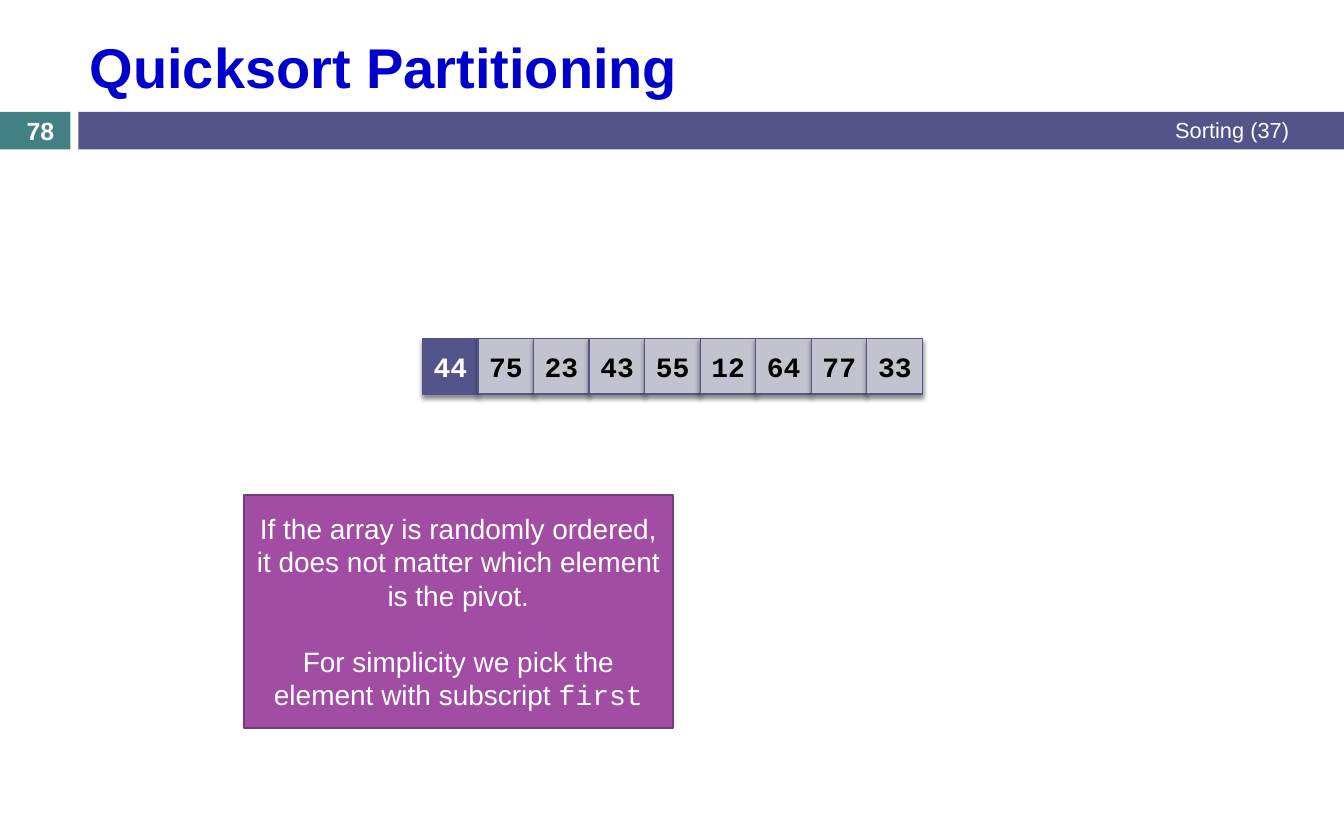
from lxml import etree
from pptx import Presentation
from pptx.dml.color import RGBColor
from pptx.enum.shapes import MSO_SHAPE as Shape
from pptx.enum.text import MSO_ANCHOR as Anchor, PP_ALIGN as Align
from pptx.oxml import parse_xml
from pptx.oxml.ns import nsdecls
from pptx.util import Cm, Pt

INDIGO, TEAL, PURPLE, WHITE = "53548A", "438086", "A04DA3", "FFFFFF"
SHADOW = (
    f'<a:effectLst {nsdecls("a")}>'
    '<a:outerShdw blurRad="38100" dist="30480" dir="5400000" rotWithShape="0">'
    '<a:srgbClr val="000000"><a:alpha val="45000"/></a:srgbClr>'
    '</a:outerShdw></a:effectLst>'
)


def add_box(shapes, left, top, width, height, fill, outline=None, weight=0.75):
    box = shapes.add_shape(Shape.RECTANGLE, Cm(left), Cm(top), Cm(width), Cm(height))
    box.shadow.inherit = False
    box.fill.solid()
    box.fill.fore_color.rgb = RGBColor.from_string(fill)
    if outline:
        box.line.color.rgb = RGBColor.from_string(outline)
        box.line.width = Pt(weight)
    else:
        box.line.fill.background()
    return box


def format_text(holder, size, color, align, bold=False, font="Arial"):
    frame = holder.text_frame
    frame.word_wrap = True
    frame.vertical_anchor = Anchor.MIDDLE
    for paragraph in frame.paragraphs:
        paragraph.alignment = align
        for run in paragraph.runs:
            run.font.name = font
            run.font.size = Pt(size)
            run.font.bold = bold
            run.font.color.rgb = RGBColor.from_string(color)


prs = Presentation()
prs.slide_width, prs.slide_height = Cm(30.48), Cm(19.05)
slide = prs.slides.add_slide(prs.slide_layouts[5])

title = slide.shapes.title
title.left, title.top, title.width, title.height = Cm(1.78), Cm(0.48), Cm(27.71), Cm(2.03)
title.text_frame.text = "Quicksort Partitioning"
format_text(title, 36, "0000CC", Align.LEFT, bold=True)

add_box(slide.shapes, 0, 2.54, 1.6, 0.85, TEAL)
add_box(slide.shapes, 1.78, 2.54, 28.7, 0.85, INDIGO)

array = slide.shapes.add_group_shape()
for index, value in enumerate([44, 75, 23, 43, 55, 12, 64, 77, 33]):
    is_pivot = index == 0
    cell = add_box(array.shapes, 9.58 + index * 1.26, 7.67, 1.27, 1.27,
                   INDIGO if is_pivot else "C3C3CF", INDIGO, 0.79)
    properties = cell.fill._xPr
    properties.replace(properties.find("{*}effectLst"), parse_xml(SHADOW))
    cell.text_frame.margin_left = cell.text_frame.margin_right = 0
    cell.text_frame.text = str(value)
    format_text(cell, 18, WHITE if is_pivot else "000000", Align.CENTER,
                bold=True, font="Courier New")

pivot_note = add_box(slide.shapes, 5.53, 11.22, 9.73, 5.29, PURPLE, "763979", 1.5)
pivot_note.text_frame.text = (
    "If the array is randomly ordered, it does not matter which element is the pivot."
)
choice = pivot_note.text_frame.add_paragraph()
choice.text = "For simplicity we pick the element with subscript "
choice.space_before = Pt(20.7)
subscript = choice.add_run()
subscript.text = "first"
format_text(pivot_note, 18, WHITE, Align.CENTER)
subscript.font.name = "Courier New"

for left, top, width, height, label, size, align, bold in [
    (11.43, 2.51, 18.06, 0.89, "Sorting (37)", 14, Align.RIGHT, False),
    (0, 2.57, 1.83, 0.76, "78", 16, Align.CENTER, True),
]:
    bar_label = slide.shapes.add_textbox(Cm(left), Cm(top), Cm(width), Cm(height))
    bar_label.text_frame.text = label
    format_text(bar_label, size, WHITE, align, bold)

prs.save("out.pptx")
